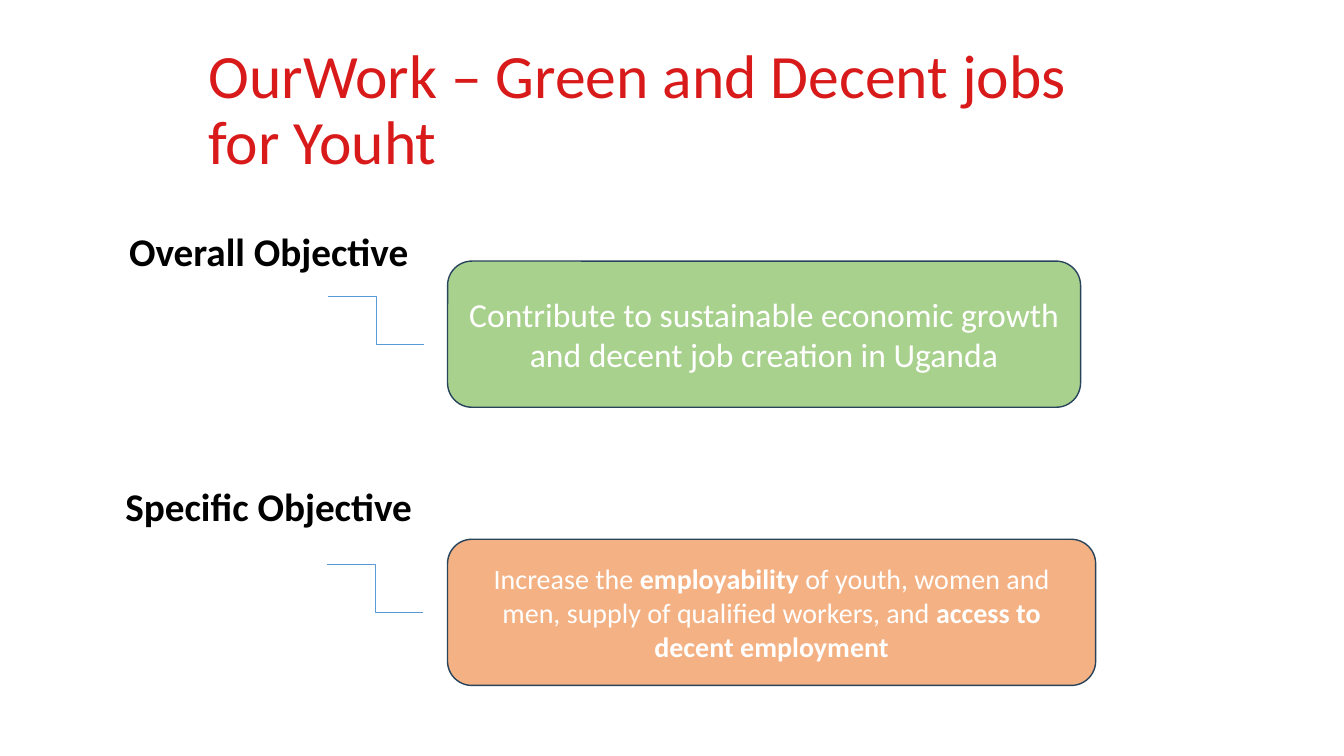
from dataclasses import dataclass

from lxml import etree
from pptx import Presentation
from pptx.dml.color import RGBColor
from pptx.enum.shapes import MSO_CONNECTOR, MSO_SHAPE
from pptx.enum.text import MSO_ANCHOR, PP_ALIGN
from pptx.oxml.ns import qn
from pptx.shapes.base import BaseShape
from pptx.slide import Slide
from pptx.util import Pt

ROUNDED = MSO_SHAPE.ROUNDED_RECTANGLE
ELBOW = MSO_CONNECTOR.ELBOW
MIDDLE = MSO_ANCHOR.MIDDLE
LEFT = PP_ALIGN.LEFT
CENTER = PP_ALIGN.CENTER

FONT = "Calibri"
RED = RGBColor(0xD8, 0x1A, 0x1A)
BLACK = RGBColor(0x00, 0x00, 0x00)
WHITE = RGBColor(0xFF, 0xFF, 0xFF)
GREEN = RGBColor(0xA9, 0xD1, 0x8E)
ORANGE = RGBColor(0xF4, 0xB1, 0x83)
NAVY = RGBColor(0x28, 0x44, 0x5D)
BLUE = RGBColor(0x5B, 0x9B, 0xD5)

LABEL_LEFT, LABEL_WIDTH, LABEL_HEIGHT = 74.88, 234, 35.28
CARD_LEFT, CARD_HEIGHT = 319.68, 104.4
ELBOW_WIDTH, ELBOW_HEIGHT = 69.12, 34.56


@dataclass(frozen=True)
class Span:
    text: str
    bold: bool = False


@dataclass(frozen=True)
class Objective:
    label: str
    label_top: float
    spans: tuple[Span, ...]
    text_size: float
    card_top: float
    card_width: float
    fill: RGBColor
    elbow_left: float
    elbow_top: float


OBJECTIVES = (
    Objective(
        "Overall Objective", 161.28,
        (Span("Contribute to sustainable economic growth and decent job creation in Uganda"),),
        24, 186.48, 452.16, GREEN, 234, 211.68,
    ),
    Objective(
        "Specific Objective", 343.44,
        (
            Span("Increase the "),
            Span("employability ", bold=True),
            Span("of youth, women and men, supply of qualified workers, and "),
            Span("access to decent employment", bold=True),
        ),
        20, 385.2, 462.96, ORANGE, 233.28, 403.2,
    ),
)


def write_text(shape: BaseShape, spans: tuple[Span, ...], *, size: float, color: RGBColor,
               alignment: PP_ALIGN = CENTER, line_spacing: float = 1.0) -> None:
    frame = shape.text_frame
    frame.word_wrap = True
    frame.vertical_anchor = MIDDLE
    paragraph = frame.paragraphs[0]
    paragraph.alignment = alignment
    paragraph.line_spacing = line_spacing
    for span in spans:
        run = paragraph.add_run()
        run.text = span.text
        run.font.name = FONT
        run.font.size = Pt(size)
        run.font.bold = span.bold
        run.font.color.rgb = color


def add_box(slide: Slide, left: float, top: float, width: float, height: float,
            fill: RGBColor, outline: RGBColor) -> BaseShape:
    shape = slide.shapes.add_shape(ROUNDED, Pt(left), Pt(top), Pt(width), Pt(height))
    shape.shadow.inherit = False
    shape.fill.solid()
    shape.fill.fore_color.rgb = fill
    shape.line.color.rgb = outline
    shape.line.width = Pt(1)
    return shape


def add_elbow(slide: Slide, left: float, top: float) -> None:
    connector = slide.shapes.add_connector(
        ELBOW, Pt(left), Pt(top), Pt(left + ELBOW_WIDTH), Pt(top + ELBOW_HEIGHT))
    connector.line.color.rgb = BLUE
    connector.line.width = Pt(0.5)
    etree.SubElement(connector._element.spPr, qn("a:effectLst"))


def add_title(slide: Slide, text: str) -> None:
    title = slide.shapes.add_textbox(Pt(141.84), Pt(27.36), Pt(680.4), Pt(104.4))
    write_text(title, (Span(text),), size=44, color=RED, alignment=LEFT, line_spacing=0.9)


def add_objective(slide: Slide, objective: Objective) -> None:
    label = add_box(slide, LABEL_LEFT, objective.label_top, LABEL_WIDTH, LABEL_HEIGHT,
                    WHITE, WHITE)
    write_text(label, (Span(objective.label, bold=True),), size=28, color=BLACK)
    card = add_box(slide, CARD_LEFT, objective.card_top, objective.card_width, CARD_HEIGHT,
                   objective.fill, NAVY)
    write_text(card, objective.spans, size=objective.text_size, color=WHITE)
    add_elbow(slide, objective.elbow_left, objective.elbow_top)


def main() -> None:
    presentation = Presentation()
    presentation.slide_width = Pt(960)
    presentation.slide_height = Pt(540)
    slide = presentation.slides.add_slide(presentation.slide_layouts[6])
    add_title(slide, "OurWork – Green and Decent jobs for Youht")
    for objective in OBJECTIVES:
        add_objective(slide, objective)
    presentation.save("out.pptx")


if __name__ == "__main__":
    main()
